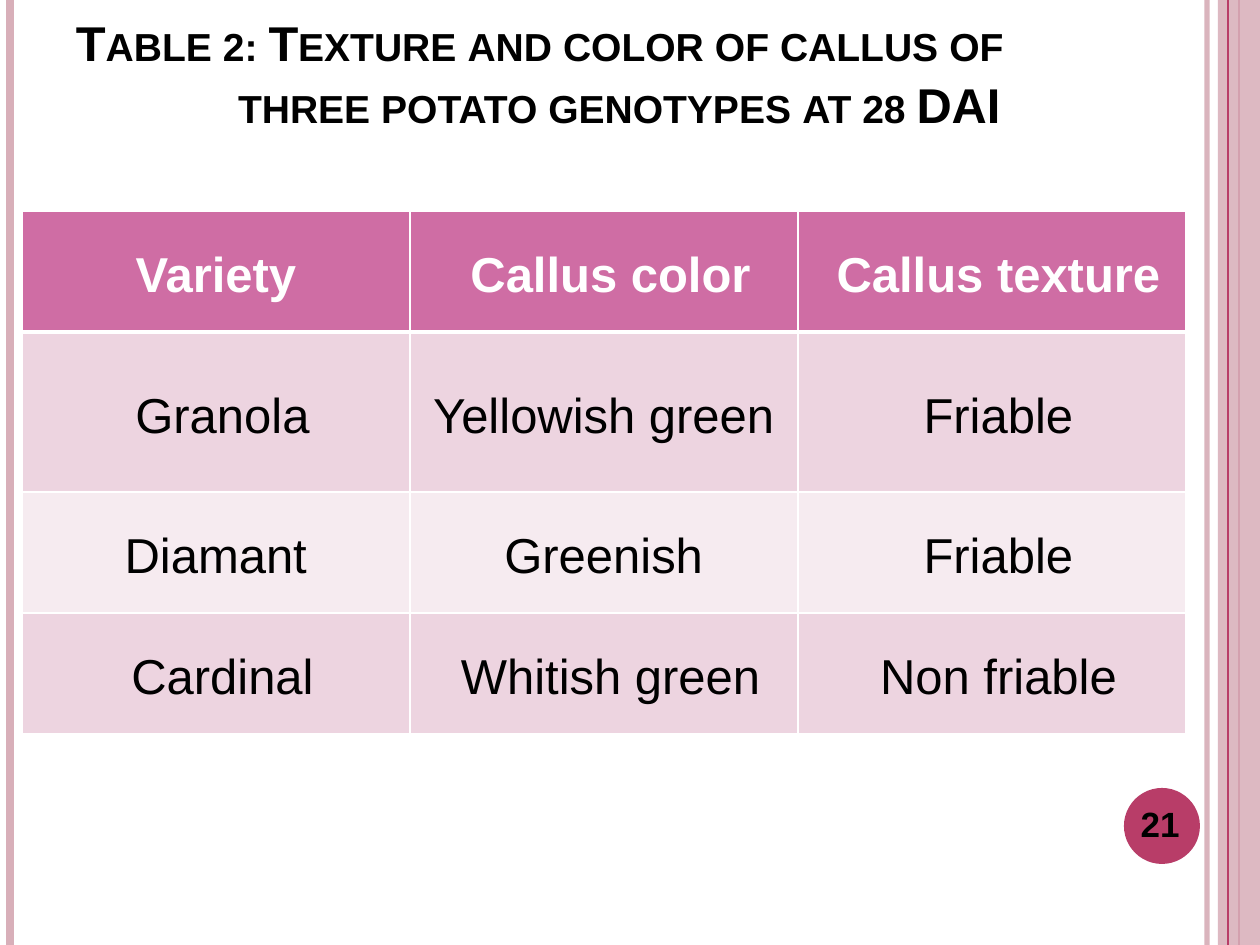
from typing import NamedTuple

from lxml.etree import SubElement
from pptx import Presentation
from pptx.dml.color import RGBColor
from pptx.enum.shapes import MSO_CONNECTOR, MSO_SHAPE
from pptx.enum.text import MSO_ANCHOR as Anchor, PP_ALIGN as Align
from pptx.oxml.ns import qn
from pptx.util import Emu, Pt

COLORS = {
    "rose": "D8AFB9",
    "crimson": "B83D68",
    "header": "CF6DA4",
    "odd": "EDD4E0",
    "even": "F6EBF0",
    "white": "FFFFFF",
    "black": "000000",
}
FONT = "Arial"
SLIDE_WIDTH, SLIDE_HEIGHT = 1260, 945


class Stripe(NamedTuple):
    x: int
    color: str
    width: float
    opacity: int = 100


class Box(NamedTuple):
    left: int
    top: int
    width: int
    height: int


BACK_STRIPES = [
    Stripe(1207, "rose", 3, 93),
    Stripe(10, "rose", 4.5),
    Stripe(1239, "crimson", 1.5),
]
FRONT_STRIPE = Stripe(1228, "crimson", 0.75)
BAND = Box(1218, 0, 42, SLIDE_HEIGHT)
BADGE = Box(1124, 788, 76, 76)
NUMBER = Box(1113, 798, 94, 50)
TITLE = Box(63, 38, 1029, 157)
TITLE_LINES = [
    ("Table 2: Texture and color of callus of", 0),
    ("three potato genotypes at 28 DAI", 162),
]
TABLE_LEFT, TABLE_TOP, COLUMN_WIDTH = 22, 211, 388
ROW_HEIGHTS = [121, 160, 121, 121]
ROWS = [
    ["Variety", "Callus color", "Callus texture"],
    ["Granola", "Yellowish green ", "Friable"],
    ["Diamant ", "Greenish ", "Friable"],
    ["Cardinal", "Whitish green", "Non friable"],
]


def px(value: int) -> Emu:
    return Emu(round(value * 914400 / 126))


def rgb(name: str) -> RGBColor:
    return RGBColor.from_string(COLORS[name])


def place(box: Box) -> list[Emu]:
    return [px(value) for value in box]


def style_font(font, size: float, color: str, bold: bool) -> None:
    font.name, font.size, font.bold = FONT, Pt(size), bold
    font.color.rgb = rgb(color)


def set_opacity(element, percent: int) -> None:
    color = element.find(".//" + qn("a:srgbClr"))
    SubElement(color, qn("a:alpha"), val=str(percent * 1000))


def indent(paragraph, distance: int) -> None:
    properties = paragraph._p.get_or_add_pPr()
    properties.set("marL", str(px(distance)))
    properties.set("indent", "0")


def draw_stripe(slide, stripe: Stripe) -> None:
    connector = slide.shapes.add_connector(
        MSO_CONNECTOR.STRAIGHT, px(stripe.x), 0, px(stripe.x), px(SLIDE_HEIGHT))
    connector.line.color.rgb = rgb(stripe.color)
    connector.line.width = Pt(stripe.width)
    properties = connector._element.spPr
    if stripe.opacity < 100:
        set_opacity(properties, stripe.opacity)
    SubElement(properties, qn("a:effectLst"))


def draw_shape(slide, kind, box: Box, color: str, opacity: int = 100) -> None:
    shape = slide.shapes.add_shape(kind, *place(box))
    shape.shadow.inherit = False
    shape.fill.solid()
    shape.fill.fore_color.rgb = rgb(color)
    shape.line.fill.background()
    if opacity < 100:
        set_opacity(shape._element.spPr, opacity)


def draw_title(slide) -> None:
    title = slide.shapes.title
    title.left, title.top, title.width, title.height = place(TITLE)
    frame = title.text_frame
    frame.text = "\n".join(text for text, _ in TITLE_LINES)
    frame.word_wrap = True
    frame.vertical_anchor = Anchor.BOTTOM
    frame.margin_left = frame.margin_right = px(13)
    frame.margin_bottom = px(62)
    for paragraph, (_, distance) in zip(frame.paragraphs, TITLE_LINES):
        paragraph.alignment = Align.LEFT
        paragraph.space_before = Pt(1.7 if distance else 0)
        indent(paragraph, distance)
        for run in paragraph.runs:
            style_font(run.font, 27.9, "black", True)
            run._r.get_or_add_rPr().set("cap", "small")


def draw_number(slide, text: str) -> None:
    frame = slide.shapes.add_textbox(*place(NUMBER)).text_frame
    frame.text = text
    frame.word_wrap = True
    frame.vertical_anchor = Anchor.MIDDLE
    paragraph = frame.paragraphs[0]
    paragraph.alignment = Align.CENTER
    style_font(paragraph.runs[0].font, 20, "black", True)


def set_borders(cell, top: int, bottom: int) -> None:
    properties = cell._tc.get_or_add_tcPr()
    for side, width in (("L", 1), ("R", 1), ("T", top), ("B", bottom)):
        border = SubElement(properties, qn(f"a:ln{side}"), w=str(Pt(width)))
        fill = SubElement(border, qn("a:solidFill"))
        SubElement(fill, qn("a:srgbClr"), val=COLORS["white"])


def fill_cell(cell, text: str, row: int, column: int) -> None:
    header = row == 0
    set_borders(cell, 3 if row == 1 else 1, 3 if header else 1)
    cell.fill.solid()
    cell.fill.fore_color.rgb = rgb("header" if header else "odd" if row % 2 else "even")
    cell.vertical_anchor = Anchor.MIDDLE
    cell.margin_left = cell.margin_right = cell.margin_top = cell.margin_bottom = 0
    cell.text_frame.text = text
    paragraph = cell.text_frame.paragraphs[0]
    paragraph.alignment = Align.CENTER
    paragraph.line_spacing = 1.15
    indent(paragraph, 0 if row == column == 0 else 13)
    style_font(paragraph.runs[0].font, 28, "white" if header else "black", header)


def draw_table(slide) -> None:
    columns = len(ROWS[0])
    box = Box(TABLE_LEFT, TABLE_TOP, columns * COLUMN_WIDTH, sum(ROW_HEIGHTS))
    table = slide.shapes.add_table(len(ROWS), columns, *place(box)).table
    for column in table.columns:
        column.width = px(COLUMN_WIDTH)
    for row, (height, texts) in enumerate(zip(ROW_HEIGHTS, ROWS)):
        table.rows[row].height = px(height)
        for column, text in enumerate(texts):
            fill_cell(table.cell(row, column), text, row, column)


def main() -> None:
    presentation = Presentation()
    presentation.slide_width = px(SLIDE_WIDTH)
    presentation.slide_height = px(SLIDE_HEIGHT)
    slide = presentation.slides.add_slide(presentation.slide_layouts[5])
    for stripe in BACK_STRIPES:
        draw_stripe(slide, stripe)
    draw_shape(slide, MSO_SHAPE.RECTANGLE, BAND, "rose", 87)
    draw_stripe(slide, FRONT_STRIPE)
    draw_shape(slide, MSO_SHAPE.OVAL, BADGE, "crimson")
    draw_title(slide)
    draw_table(slide)
    draw_number(slide, "21")
    presentation.save("out.pptx")


if __name__ == "__main__":
    main()
